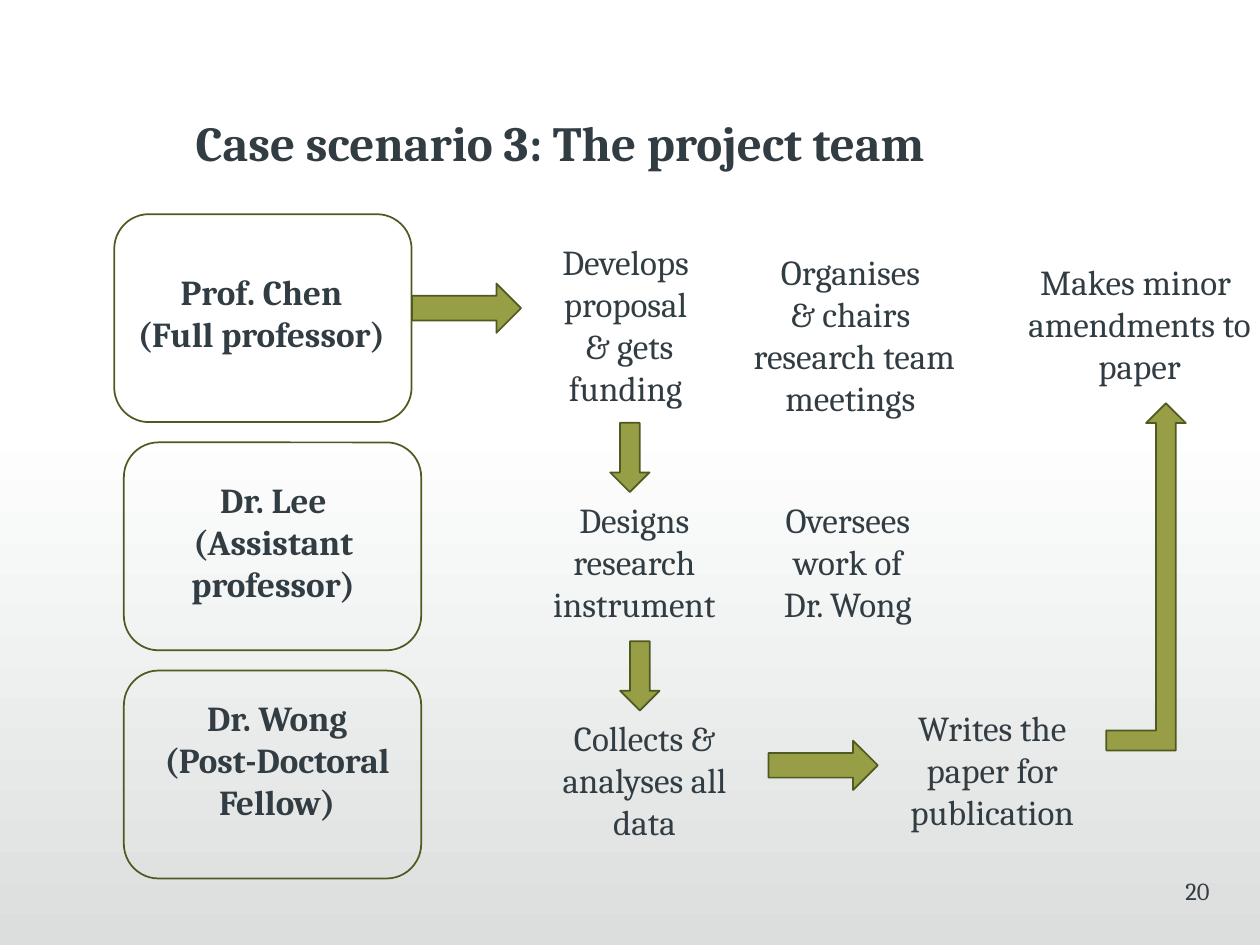
"""Build the project team slide of case scenario 3."""
from pptx import Presentation
from pptx.dml.color import RGBColor
from pptx.enum.shapes import MSO_SHAPE
from pptx.enum.text import MSO_AUTO_SIZE, PP_ALIGN
from pptx.util import Pt

RECT, ROUNDED = MSO_SHAPE.RECTANGLE, MSO_SHAPE.ROUNDED_RECTANGLE
RIGHT_ARROW, DOWN_ARROW = MSO_SHAPE.RIGHT_ARROW, MSO_SHAPE.DOWN_ARROW
BENT_ARROW = MSO_SHAPE.BENT_UP_ARROW
GROW = MSO_AUTO_SIZE.SHAPE_TO_FIT_TEXT
CENTER, RIGHT = PP_ALIGN.CENTER, PP_ALIGN.RIGHT
INK, OLIVE, DARK_OLIVE = "323D43", "979E45", "4F5A20"


def rgb(value):
    return RGBColor.from_string(value)


def add_text(box, text, size=20, bold=False, wrap=True, align=CENTER):
    sp = s.shapes.add_textbox(*map(Pt, box))
    tf = sp.text_frame
    tf.text = text
    tf.word_wrap = wrap
    tf.auto_size = GROW
    for p in tf.paragraphs:
        p.alignment = align
        for r in p.runs:
            r.font.name = "Cambria"
            r.font.size = Pt(size)
            r.font.bold = bold
            r.font.color.rgb = rgb(INK)
    return tf


prs = Presentation()
prs.slide_width, prs.slide_height = Pt(720), Pt(540)
s = prs.slides.add_slide(prs.slide_layouts[6])

sp = s.shapes.add_shape(RECT, Pt(-6.5), Pt(239.8), Pt(726.5), Pt(300.2))
sp.shadow.inherit = False
sp.line.fill.background()
sp.fill.gradient()
sp.fill.gradient_angle = 270
for stop, color, position in zip(sp.fill.gradient_stops, ("FFFFFF", "DCDEDE"), (0, 1)):
    stop.color.rgb = rgb(color)
    stop.position = position

outlines = [
    (ROUNDED, 65.3, 122.4, 169.9, 118.8),
    (ROUNDED, 70.8, 252.8, 169.9, 118.8),
    (ROUNDED, 70.8, 383.2, 169.9, 118.8),
    (RIGHT_ARROW, 235.4, 162, 62.4, 28.2),
    (RIGHT_ARROW, 439.2, 423.2, 62.4, 28.2),
    (DOWN_ARROW, 348.7, 241.6, 22.5, 39.6),
    (DOWN_ARROW, 354.4, 366.4, 22.5, 39.6),
    (BENT_ARROW, 632.2, 230.4, 45.4, 198.4),
]
for kind, *box in outlines:
    sp = s.shapes.add_shape(kind, *map(Pt, box))
    sp.shadow.inherit = False
    sp.line.color.rgb = rgb(DARK_OLIVE)
    sp.line.width = Pt(1)
    if kind == ROUNDED:
        sp.fill.background()
    else:
        sp.fill.solid()
        sp.fill.fore_color.rgb = rgb(OLIVE)

add_text((69.1, 60.5, 501.8, 41), "Case scenario 3: The project team", 28, True, False)

members = [
    ((59.8, 151.2, 179.3, 55.4), "Prof. Chen\n(Full professor)", False),
    ((65.5, 270, 181.4, 79.9), "Dr. Lee\n(Assistant professor)", True),
    ((65.5, 394.6, 185.8, 79.9), "Dr. Wong\n(Post-Doctoral Fellow)", True),
]
for box, text, wrap in members:
    add_text(box, text, bold=True, wrap=wrap)

tasks = [
    ((292.3, 133.9, 130.3, 104.4), "Develops proposal\n & gets funding"),
    ((405.4, 139.7, 165.6, 104.4), "Organises \n& chairs \nresearch team meetings "),
    ((558.7, 145.4, 185, 79.2), "Makes minor \namendments to paper"),
    ((303.1, 281.5, 118.8, 79.9), "Designs research instrument"),
    ((433.4, 281.5, 102.2, 79.9), "Oversees work of Dr. Wong"),
    ((308.9, 406.1, 118.8, 79.9), "Collects & analyses all data"),
    ((507.6, 400.3, 118.8, 79.9), "Writes the paper for publication"),
]
for box, text in tasks:
    add_text(box, text)

tf = add_text((541.4, 496.8, 149.8, 36), "20", 14, align=RIGHT)
tf.auto_size = MSO_AUTO_SIZE.NONE
tf.margin_right = Pt(0)

prs.save("out.pptx")
